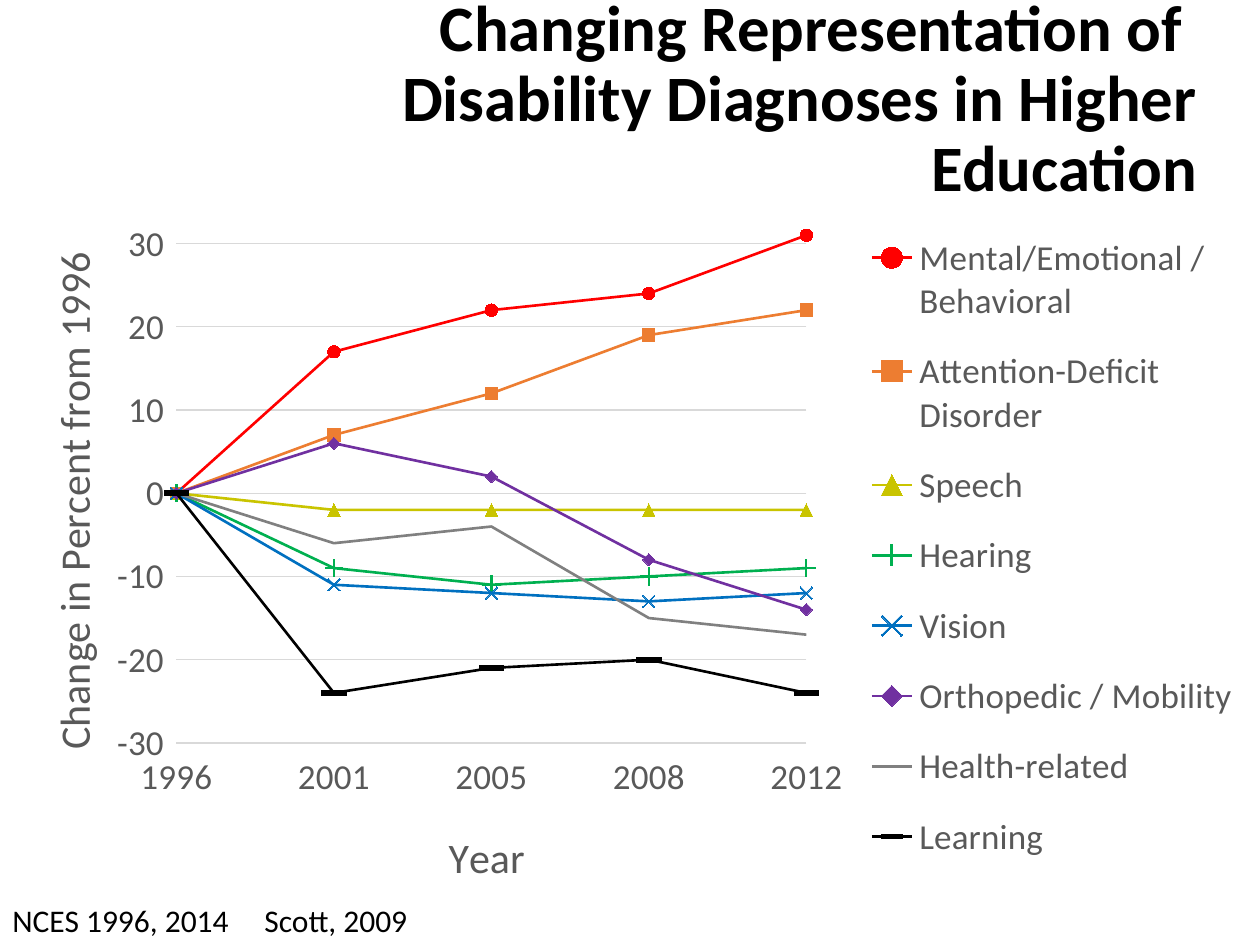
from lxml import etree
from pptx import Presentation
from pptx import util as u
from pptx.chart.data import CategoryChartData
from pptx.dml.color import RGBColor
from pptx.enum import chart as ch, text
from pptx.oxml import parse_xml
from pptx.oxml.ns import nsdecls, qn

BLACK = RGBColor(0, 0, 0)
GRAY_TEXT = RGBColor(0x59, 0x59, 0x59)
GRID = RGBColor(0xD9, 0xD9, 0xD9)
RED = RGBColor(0xFF, 0, 0)
ORANGE = RGBColor(0xED, 0x7D, 0x31)
OLIVE = RGBColor(0xC9, 0xC4, 0)
GREEN = RGBColor(0, 0xB0, 0x50)
BLUE = RGBColor(0, 0x70, 0xC0)
PURPLE = RGBColor(0x70, 0x30, 0xA0)
GRAY = RGBColor(0x80, 0x80, 0x80)

MARK = ch.XL_MARKER_STYLE
YEARS = ["1996", "2001", "2005", "2008", "2012"]
DIAGNOSES = [  # name, values, color, marker, marker size
    ("Mental/Emotional / Behavioral", (0, 17, 22, 24, 31), RED, MARK.CIRCLE, 7),
    ("Attention-Deficit Disorder", (0, 7, 12, 19, 22), ORANGE, MARK.SQUARE, 7),
    ("Speech", (0, -2, -2, -2, -2), OLIVE, MARK.TRIANGLE, 7),
    ("Hearing", (0, -9, -11, -10, -9), GREEN, MARK.PLUS, 10),
    ("Vision", (0, -11, -12, -13, -12), BLUE, MARK.X, 7),
    ("Orthopedic / Mobility", (0, 6, 2, -8, -14), PURPLE, MARK.DIAMOND, 7),
    ("Health-related", (0, -6, -4, -15, -17), GRAY, MARK.NONE, 7),
    ("Learning", (0, -24, -21, -20, -24), BLACK, MARK.DASH, 14),
]


def style_font(font, size, color, bold=False):
    font.name, font.size, font.bold = "Calibri", u.Pt(size), bold
    font.color.rgb = color


def write(paragraph, words, size=18, color=BLACK, bold=False, align=None,
          spacing=None, tab=None):
    if tab:
        tabs = etree.SubElement(paragraph._p.get_or_add_pPr(), qn("a:tabLst"))
        etree.SubElement(tabs, qn("a:tab"), pos=str(u.Inches(tab)), algn="l")
    paragraph.text = words
    if align is not None:
        paragraph.alignment = align
    if spacing:
        paragraph.line_spacing = spacing
    for run in paragraph.runs:
        style_font(run.font, size, color, bold)


def place(element, x, y, w=None, h=None, inner=False):
    """Give a chart part a manual layout in fractions of the chart."""
    for old in element.findall(qn("c:layout")):
        element.remove(old)
    rows = [("layoutTarget", "inner")] if inner else []
    rows += [("xMode", "edge"), ("yMode", "edge"), ("x", x), ("y", y)]
    if w:
        rows += [("w", w), ("h", h)]
    body = "".join(f'<c:{tag} val="{value}"/>' for tag, value in rows)
    layout = parse_xml(f'<c:layout {nsdecls("c")}><c:manualLayout>{body}'
                       '</c:manualLayout></c:layout>')
    before = [child for child in element
              if child.tag in (qn("c:tx"), qn("c:legendPos"))]
    element.insert(len(before), layout)


class Deck:
    def __init__(self):
        self.prs = Presentation()
        self.prs.slide_width, self.prs.slide_height = u.Inches(10), u.Inches(7.5)
        self.slide = self.prs.slides.add_slide(self.prs.slide_layouts[5])

    def title(self, words, left, top, width, height):
        title = self.slide.shapes.title
        title.left, title.top = u.Inches(left), u.Inches(top)
        title.width, title.height = u.Inches(width), u.Inches(height)
        frame = title.text_frame
        frame.auto_size = text.MSO_AUTO_SIZE.NONE
        frame.vertical_anchor = text.MSO_ANCHOR.MIDDLE
        write(frame.paragraphs[0], words, size=37, bold=True,
              align=text.PP_ALIGN.RIGHT, spacing=0.9)

    def label(self, words, left, top, width, height, **style):
        box = self.slide.shapes.add_textbox(
            u.Inches(left), u.Inches(top), u.Inches(width), u.Inches(height))
        box.text_frame.word_wrap = False
        write(box.text_frame.paragraphs[0], words, **style)

    def axis(self, axis, name, x, y):
        axis.has_title = True
        write(axis.axis_title.text_frame.paragraphs[0], name,
              size=24, color=GRAY_TEXT)
        place(axis.axis_title._element, x, y)
        axis.major_tick_mark = axis.minor_tick_mark = ch.XL_TICK_MARK.NONE
        axis.tick_label_position = ch.XL_TICK_LABEL_POSITION.LOW
        style_font(axis.tick_labels.font, 20, GRAY_TEXT)

    def line_chart(self, left, top, width, height):
        data = CategoryChartData()
        data.categories = YEARS
        for name, values, *_ in DIAGNOSES:
            data.add_series(name, values)
        chart = self.slide.shapes.add_chart(
            ch.XL_CHART_TYPE.LINE_MARKERS, u.Inches(left), u.Inches(top),
            u.Inches(width), u.Inches(height), data).chart
        chart.has_title = False
        style_font(chart.font, 10, BLACK)
        chart.plots[0].vary_by_categories = False

        for series, (_, _, color, marker, size) in zip(chart.series, DIAGNOSES):
            series.smooth = False
            series.format.line.color.rgb = color
            series.format.line.width = u.Pt(1.5)
            series.marker.style = marker
            if marker == MARK.NONE:
                continue
            series.marker.size = size
            look = series.marker.format
            look.line.color.rgb = color
            if marker == MARK.PLUS:
                look.fill.background()
            else:
                look.fill.solid()
                look.fill.fore_color.rgb = color

        years, change = chart.category_axis, chart.value_axis
        self.axis(years, "Year", 0.35, 0.89)
        years.format.line.color.rgb = GRID
        years.format.line.width = u.Pt(0.75)
        self.axis(change, "Change in Percent from 1996", 0.03, 0.08)
        change.minimum_scale, change.maximum_scale = -30, 35
        change.major_unit = 10
        change.format.line.fill.background()
        change.major_gridlines.format.line.color.rgb = GRID
        change.major_gridlines.format.line.width = u.Pt(0.75)
        # The first and last years sit on the edges of the plot.
        change._element.find(qn("c:crosses")).addnext(
            parse_xml(f'<c:crossBetween {nsdecls("c")} val="midCat"/>'))

        chart.has_legend = True
        chart.legend.position = ch.XL_LEGEND_POSITION.RIGHT
        chart.legend.include_in_layout = False
        style_font(chart.legend.font, 20, GRAY_TEXT)
        place(chart.legend._element, 0.68, 0.03, 0.31, 0.95)
        plot_area = chart._chartSpace.chart.plotArea
        place(plot_area, 0.14, 0.02, 0.5, 0.76, inner=True)

    def save(self):
        self.prs.save("out.pptx")


def main():
    deck = Deck()
    deck.title("Changing Representation of \nDisability Diagnoses in Higher Education",
               1.13, 0.32, 8.47, 0.96)
    deck.line_chart(0, 1.49, 10, 5.65)
    deck.label("NCES 1996, 2014\tScott, 2009", 0, 7.1, 3.38, 0.4, tab=2)
    deck.save()


if __name__ == "__main__":
    main()
